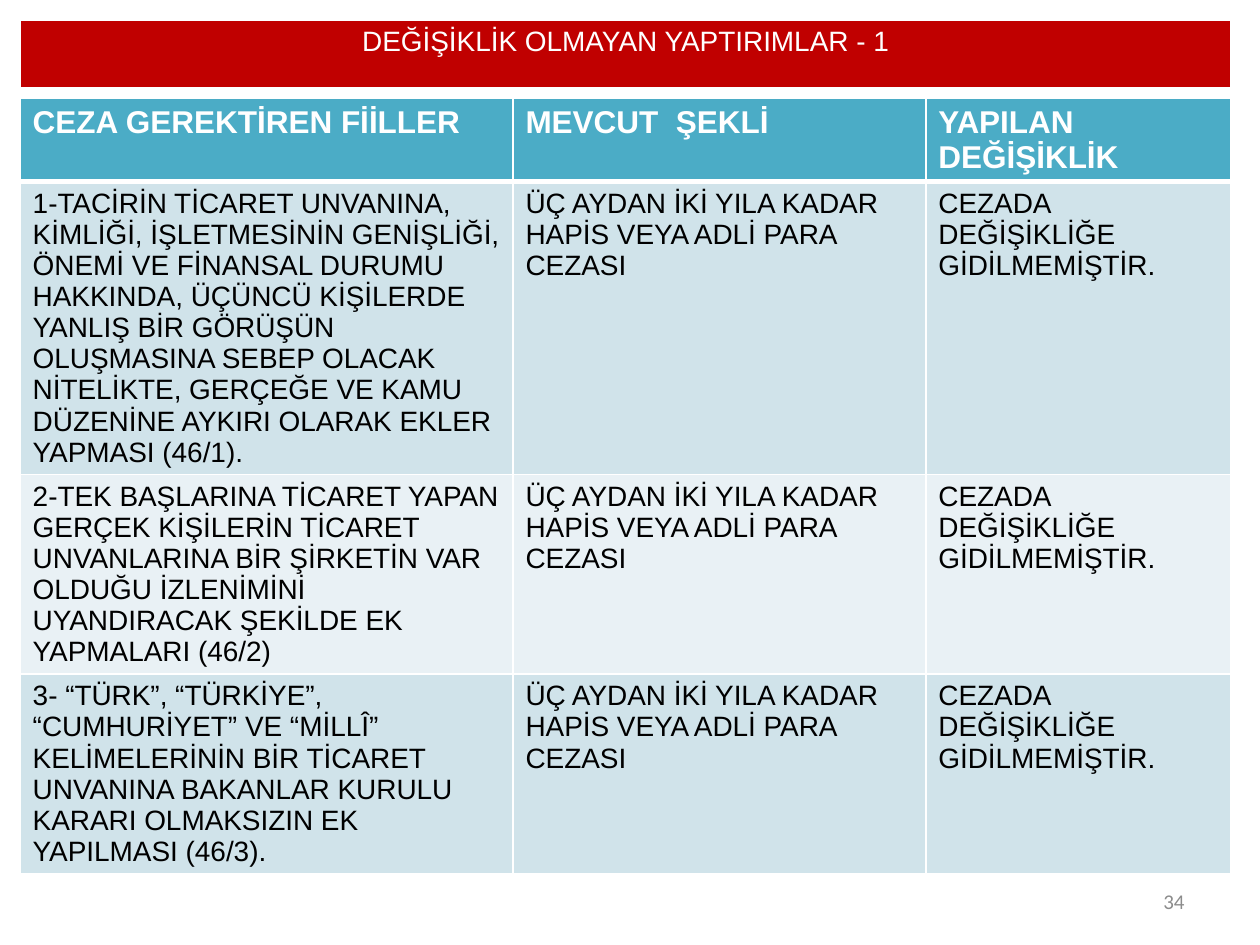
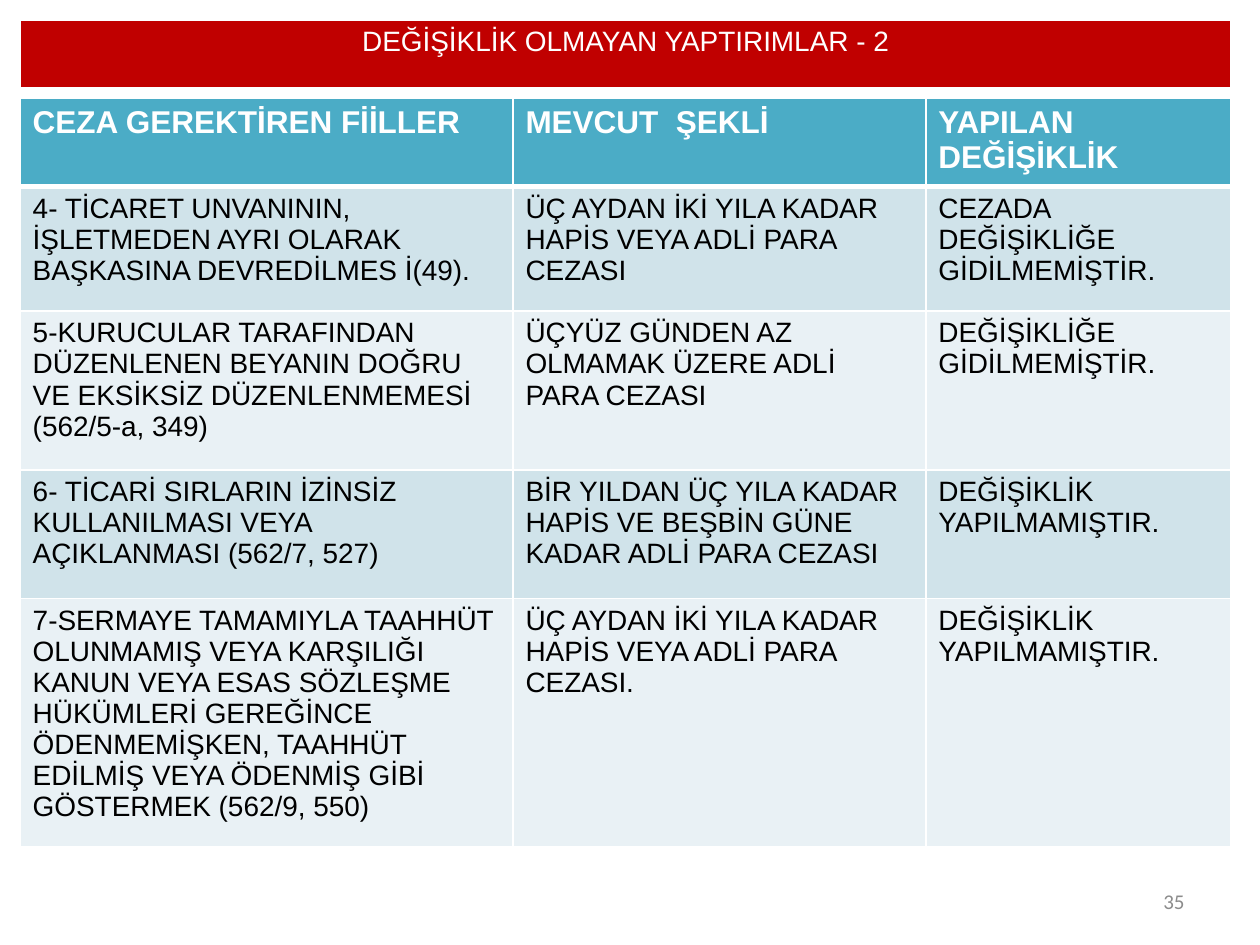
from lxml.etree import SubElement
from pptx import Presentation
from pptx.dml.color import RGBColor as RGB
from pptx.enum.text import MSO_ANCHOR as ANCHOR, PP_ALIGN as ALIGN
from pptx.oxml.ns import qn
from pptx.util import Cm, Pt

COLORS = {
    "title": "C00000", "header": "4BACC6", "odd": "D0E3EA", "even": "E9F1F5",
    "white": "FFFFFF", "text": "000000", "number": "8C8C8C",
}
TITLE_BOX = (0.41, 0.41, 24.41, 1.4)
TABLE_BOX = (0.41, 1.98, 24.41)
NUMBER_BOX = (18.2, 17.65, 5.93, 1.02)
COL_SHARES = (0.407, 0.341, 0.252)
THIN, THICK = 1, 3

HEADERS = ("CEZA GEREKTİREN FİİLLER", "MEVCUT  ŞEKLİ", "YAPILAN DEĞİŞİKLİK")
PRISON_OR_FINE = "ÜÇ AYDAN İKİ YILA KADAR HAPİS VEYA ADLİ PARA CEZASI"
PENALTY_KEPT = "CEZADA DEĞİŞİKLİĞE\nGİDİLMEMİŞTİR."
NOT_CHANGED = "DEĞİŞİKLİK YAPILMAMIŞTIR."

SLIDES = [
    {
        "part": 1, "number": 34, "heights": (1.65, 5.66, 3.73, 3),
        "rows": [
            ("1-TACİRİN TİCARET UNVANINA, KİMLİĞİ, İŞLETMESİNİN GENİŞLİĞİ, ÖNEMİ VE "
             "FİNANSAL DURUMU HAKKINDA, ÜÇÜNCÜ KİŞİLERDE YANLIŞ BİR GÖRÜŞÜN "
             "OLUŞMASINA SEBEP OLACAK NİTELİKTE, GERÇEĞE VE KAMU DÜZENİNE AYKIRI "
             "OLARAK EKLER YAPMASI (46/1).", PRISON_OR_FINE, PENALTY_KEPT),
            ("2-TEK BAŞLARINA TİCARET YAPAN GERÇEK KİŞİLERİN TİCARET UNVANLARINA BİR "
             "ŞİRKETİN VAR OLDUĞU İZLENİMİNİ UYANDIRACAK ŞEKİLDE EK  YAPMALARI (46/2)",
             PRISON_OR_FINE, PENALTY_KEPT),
            ("3- “TÜRK”, “TÜRKİYE”, “CUMHURİYET” VE “MİLLÎ” KELİMELERİNİN BİR TİCARET "
             "UNVANINA BAKANLAR KURULU KARARI OLMAKSIZIN EK YAPILMASI (46/3).",
             PRISON_OR_FINE, PENALTY_KEPT),
        ],
    },
    {
        "part": 2, "number": 35, "heights": (1.65, 2.51, 3.2, 2.59, 4.39),
        "rows": [
            ("4- TİCARET UNVANININ, İŞLETMEDEN AYRI OLARAK BAŞKASINA DEVREDİLMES "
             "İ(49).", PRISON_OR_FINE, PENALTY_KEPT),
            ("5-KURUCULAR TARAFINDAN DÜZENLENEN BEYANIN DOĞRU VE EKSİKSİZ "
             "DÜZENLENMEMESİ (562/5-a, 349)",
             "ÜÇYÜZ GÜNDEN AZ OLMAMAK ÜZERE ADLİ PARA CEZASI",
             "DEĞİŞİKLİĞE GİDİLMEMİŞTİR."),
            ("6- TİCARİ SIRLARIN İZİNSİZ KULLANILMASI VEYA AÇIKLANMASI (562/7, 527)",
             "BİR YILDAN ÜÇ YILA KADAR HAPİS VE BEŞBİN GÜNE KADAR ADLİ PARA CEZASI",
             NOT_CHANGED),
            ("7-SERMAYE TAMAMIYLA TAAHHÜT OLUNMAMIŞ VEYA KARŞILIĞI KANUN VEYA ESAS "
             "SÖZLEŞME HÜKÜMLERİ GEREĞİNCE ÖDENMEMİŞKEN, TAAHHÜT EDİLMİŞ VEYA ÖDENMİŞ "
             "GİBİ GÖSTERMEK (562/9, 550)", PRISON_OR_FINE + ".", NOT_CHANGED),
        ],
    },
]


def color(name):
    return RGB.from_string(COLORS[name])


def write(tf, text, size, ink, font="Arial", bold=False, align=ALIGN.LEFT):
    for i, line in enumerate(text.split("\n")):
        p = tf.add_paragraph() if i else tf.paragraphs[0]
        p.alignment = align
        r = p.add_run()
        r.text = line
        r.font.name, r.font.size, r.font.bold = font, Pt(size), bold
        r.font.color.rgb = color(ink)


def style_cell(cell, fill, top=THIN, bottom=THIN):
    tc_pr = cell._tc.get_or_add_tcPr()
    for side, width in (("L", THIN), ("R", THIN), ("T", top), ("B", bottom)):
        ln = SubElement(tc_pr, qn(f"a:ln{side}"), w=str(Pt(width)))
        solid = SubElement(ln, qn("a:solidFill"))
        SubElement(solid, qn("a:srgbClr"), val=COLORS["white"])
    cell.fill.solid()
    cell.fill.fore_color.rgb = color(fill)
    cell.margin_left = cell.margin_right = Cm(0.25)
    cell.margin_top = cell.margin_bottom = Cm(0.13)


def add_title(s, box, text):
    cell = s.shapes.add_table(1, 1, *map(Cm, box)).table.cell(0, 0)
    style_cell(cell, "title", bottom=THICK)
    write(cell.text_frame, text, 16, "white", align=ALIGN.CENTER)


def add_penalties(s, box, rows, heights):
    left, top, width = box
    table = s.shapes.add_table(len(heights), len(HEADERS), Cm(left), Cm(top),
                               Cm(width), Cm(sum(heights))).table
    for col, share in zip(table.columns, COL_SHARES):
        col.width = Cm(width * share)
    for row, height in zip(table.rows, heights):
        row.height = Cm(height)
    for i, texts in enumerate([HEADERS, *rows]):
        for j, text in enumerate(texts):
            cell = table.cell(i, j)
            if i == 0:
                style_cell(cell, "header", bottom=THICK)
                write(cell.text_frame, text, 18, "white", bold=True)
            else:
                style_cell(cell, "odd" if i % 2 else "even",
                           top=THICK if i == 1 else THIN)
                write(cell.text_frame, text, 16, "text")


def add_number(s, box, number):
    tf = s.shapes.add_textbox(*map(Cm, box)).text_frame
    tf.word_wrap = True
    tf.vertical_anchor = ANCHOR.MIDDLE
    write(tf, str(number), 12, "number", font="Calibri", align=ALIGN.RIGHT)


def add_penalty_slide(prs, content):
    s = prs.slides.add_slide(prs.slide_layouts[6])
    add_title(s, TITLE_BOX, f"DEĞİŞİKLİK OLMAYAN YAPTIRIMLAR - {content['part']}")
    add_penalties(s, TABLE_BOX, content["rows"], content["heights"])
    add_number(s, NUMBER_BOX, content["number"])


def main():
    prs = Presentation()
    prs.slide_width, prs.slide_height = Cm(25.4), Cm(19.05)
    for content in SLIDES:
        add_penalty_slide(prs, content)
    prs.save("out.pptx")


if __name__ == "__main__":
    main()
